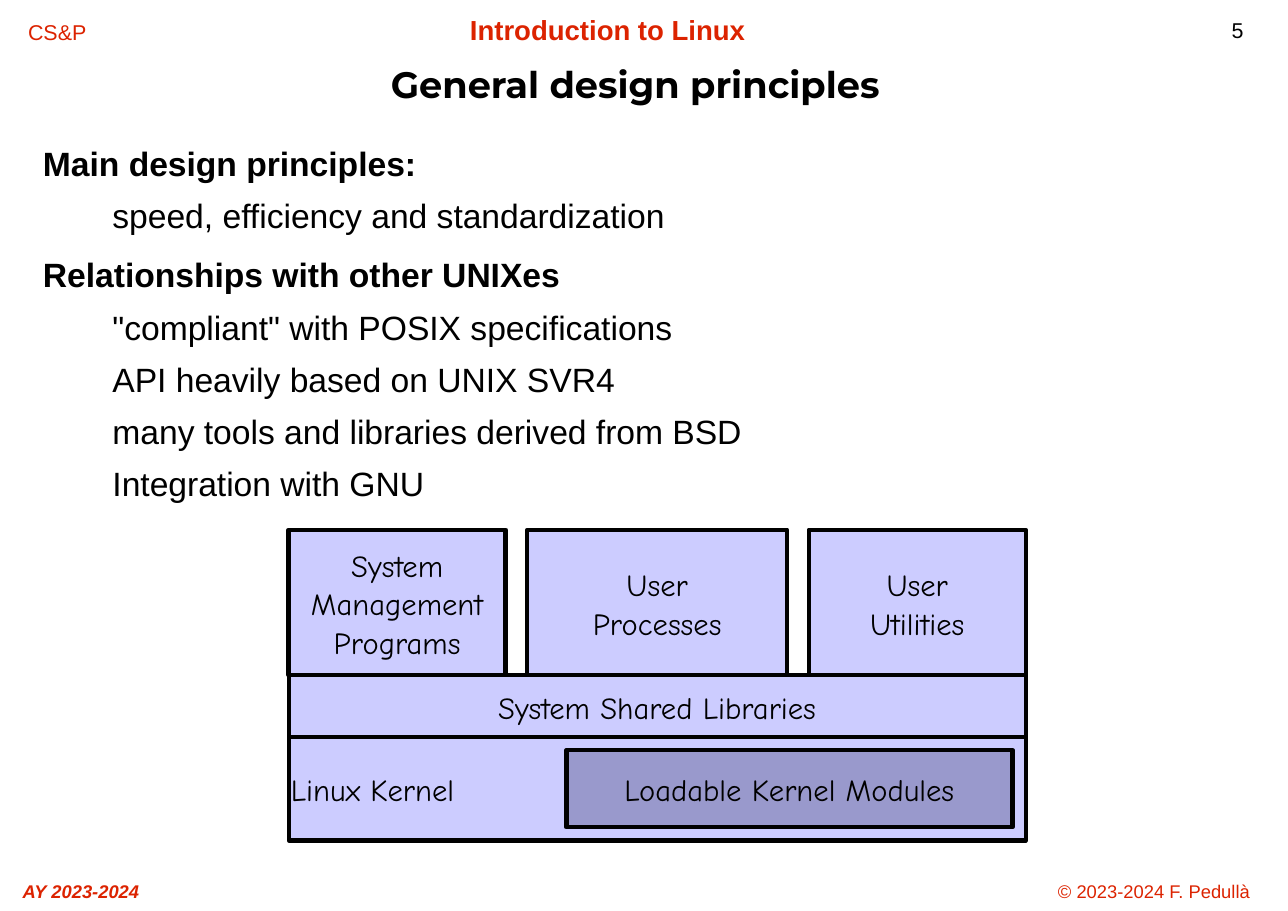
from pptx import Presentation
from pptx.dml.color import RGBColor
from pptx.enum.shapes import MSO_SHAPE
from pptx.enum.text import MSO_ANCHOR, MSO_AUTO_SIZE, PP_ALIGN
from pptx.oxml.ns import qn
from pptx.util import Inches, Pt
from lxml.etree import SubElement

RED, BLACK, LILAC, VIOLET = "DC2300", "000000", "CCCCFF", "9999CC"


def rgb(color):
    """Turn a hex string into a colour."""
    return RGBColor.from_string(color)


def style(p, size, name, color=BLACK, bold=False, italic=False):
    """Format every run of a paragraph."""
    for r in p.runs:
        r.font.size, r.font.name = Pt(size), name
        r.font.bold, r.font.italic = bold, italic
        r.font.color.rgb = rgb(color)


def frame(sp, inset_x, inset_y, anchor):
    """Prepare the text frame of a shape."""
    tf = sp.text_frame
    tf.word_wrap, tf.auto_size = True, MSO_AUTO_SIZE.NONE
    tf.vertical_anchor = anchor
    tf.margin_left = tf.margin_right = Inches(inset_x)
    tf.margin_top = tf.margin_bottom = Inches(inset_y)
    return tf


def move(sp, x, y, w, h):
    """Give a shape its box in inches."""
    sp.left, sp.top, sp.width, sp.height = map(Inches, (x, y, w, h))


def add_label(s, text, box, size, color=RED, align=PP_ALIGN.CENTER, **look):
    """Add one running header or footer label."""
    sp = s.shapes.add_textbox(*map(Inches, box))
    tf = frame(sp, 0.1, 0.05, MSO_ANCHOR.TOP)
    tf.text = text
    p = tf.paragraphs[0]
    p.alignment, p.line_spacing = align, 1.01
    style(p, size, "Arial", color, **look)


def add_running_labels(s):
    """Place the header and footer labels."""
    add_label(s, "5", (11.08, 0.1, 1.09, 0.39), 14, BLACK, PP_ALIGN.LEFT)
    add_label(s, "© 2023-2024 F. Pedullà", (9.26, 7.94, 2.43, 0.33), 12)
    add_label(s, "AY 2023-2024", (-0.45, 7.94, 2.37, 0.33), 12, bold=True, italic=True)
    add_label(s, "Introduction to Linux", (3.92, 0.07, 3.19, 0.33), 18, bold=True)
    add_label(s, "CS&P", (0.14, 0.12, 0.76, 0.33), 14)


def fill_title(s, text, *box):
    """Place and format the slide title."""
    sp = s.shapes.title
    move(sp, *box)
    tf = frame(sp, 0, 0, MSO_ANCHOR.MIDDLE)
    tf.text = text
    p = tf.paragraphs[0]
    p.alignment, p.line_spacing = PP_ALIGN.CENTER, 0.85
    style(p, 24, "Montserrat", bold=True)


def fill_body(s, sections, *box):
    """Place the headings and their indented items."""
    sp = s.placeholders[1]
    move(sp, *box)
    tf = frame(sp, 0, 0, MSO_ANCHOR.TOP)
    lines = [(text, i == 0) for section in sections for i, text in enumerate(section)]
    tf.text = "\n".join(text for text, _ in lines)
    for i, (p, (_, heading)) in enumerate(zip(tf.paragraphs, lines)):
        p.level = 0 if heading else 1
        p.line_spacing = Pt(26.2) if heading else 1.18
        p.space_before = Pt(0 if i == 0 else 12.5 if heading else 3)
        pPr = p._p.get_or_add_pPr()
        pPr.set("marL", str(Inches(0.41 if heading else 1.04)))
        pPr.set("indent", str(Inches(-0.41)))
        SubElement(pPr, qn("a:buNone"))
        style(p, 22, "Arial", bold=heading)


def add_block(s, text, x, y, w, h, fill=LILAC, align=PP_ALIGN.CENTER):
    """Add one outlined block of the system diagram."""
    sp = s.shapes.add_shape(MSO_SHAPE.RECTANGLE, *map(Inches, (x, y, w, h)))
    sp.shadow.inherit = False
    sp.fill.solid()
    sp.fill.fore_color.rgb = rgb(fill)
    sp.line.color.rgb, sp.line.width = rgb(BLACK), Pt(2.83)
    tf = frame(sp, 0.02, 0.02, MSO_ANCHOR.MIDDLE)
    tf.text = text
    for p in tf.paragraphs:
        p.alignment, p.line_spacing = align, 1.05
        style(p, 20, "Comic Neue")


def add_diagram(s, x, y, w, h):
    """Stack programs, shared libraries and kernel in a box."""
    programs_h, libraries_h = 1.32, 0.56
    libraries_y = y + programs_h
    kernel_y = libraries_y + libraries_h
    kernel_h = y + h - kernel_y
    add_block(s, "Linux Kernel", x, kernel_y, w, kernel_h, align=PP_ALIGN.LEFT)
    pad, modules_w = 0.12, 4.05
    add_block(s, "Loadable Kernel Modules", x + w - pad - modules_w, kernel_y + pad,
              modules_w, kernel_h - 2 * pad, VIOLET)
    add_block(s, "System Shared Libraries", x, libraries_y, w, libraries_h)
    programs = [("System\nManagement\nPrograms", 1.97), ("User\nProcesses", 2.36),
                ("User\nUtilities", 1.97)]
    gap = (w - sum(width for _, width in programs)) / (len(programs) - 1)
    for text, width in programs:
        add_block(s, text, x, y, width, programs_h)
        x += width + gap


def main():
    """Build the slide and save it."""
    prs = Presentation()
    prs.slide_width, prs.slide_height = Inches(11.69), Inches(8.27)
    s = prs.slides.add_slide(prs.slide_layouts[1])
    add_running_labels(s)
    fill_title(s, "General design principles", 0.19, 0.48, 11.15, 0.63)
    fill_body(s, [
        ["Main design principles:", "speed, efficiency and standardization"],
        ["Relationships with other UNIXes", '"compliant" with POSIX specifications',
         "API heavily based on UNIX SVR4", "many tools and libraries derived from BSD",
         "Integration with GNU"],
    ], 0.39, 1.3, 10.91, 3.41)
    add_diagram(s, 2.62, 4.81, 6.69, 2.82)
    prs.save("out.pptx")


if __name__ == "__main__":
    main()
